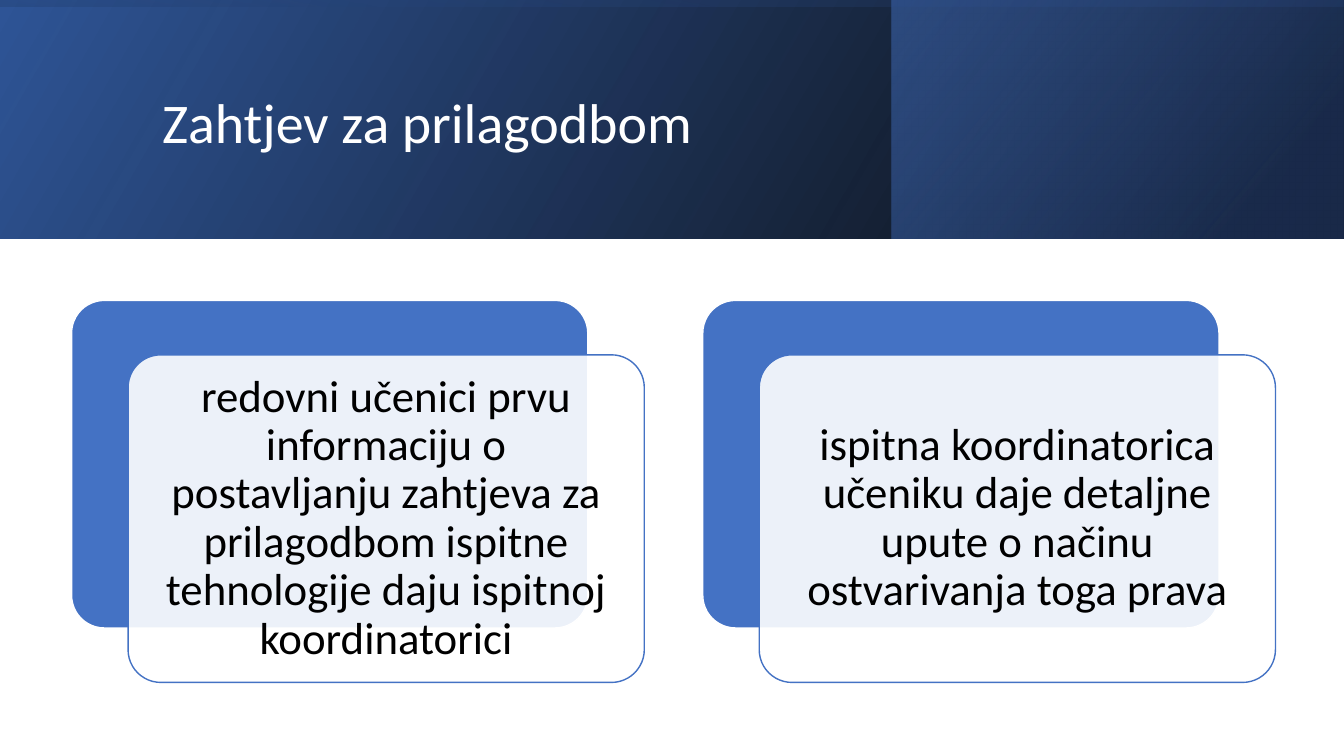
from lxml import etree
from pptx import Presentation
from pptx.dml.color import RGBColor
from pptx.enum.shapes import MSO_SHAPE
from pptx.enum.text import MSO_ANCHOR, PP_ALIGN
from pptx.oxml.ns import qn
from pptx.util import Inches, Pt

RECT = MSO_SHAPE.RECTANGLE
ROUNDED = MSO_SHAPE.ROUNDED_RECTANGLE
MIDDLE = MSO_ANCHOR.MIDDLE
LEFT, CENTER = PP_ALIGN.LEFT, PP_ALIGN.CENTER

BLACK = RGBColor(0x00, 0x00, 0x00)
WHITE = RGBColor(0xFF, 0xFF, 0xFF)
BLUE = RGBColor(0x44, 0x72, 0xC4)
MID_BLUE = RGBColor(0x2F, 0x55, 0x97)
NAVY = RGBColor(0x20, 0x38, 0x64)

SLIDE_WIDTH, SLIDE_HEIGHT, BANNER_HEIGHT = 13.33, 7.5, 2.37

# Banner layers: place, rotation, gradient angle, stops (position, colour, opacity)
BANNER_LAYERS = [
    ((0, 0, SLIDE_WIDTH, BANNER_HEIGHT), 0, 330,
     [(0, BLACK, 96), (100, MID_BLUE, 100)]),
    ((8.84, 0, 4.48, BANNER_HEIGHT), 0, 320,
     [(19, NAVY, 68), (100, BLUE, 48)]),
    ((5.48, -5.48, BANNER_HEIGHT, SLIDE_WIDTH), 270, 350,
     [(23, MID_BLUE, 16), (99, BLACK, 45)]),
]

CARD_TEXTS = [
    "redovni učenici prvu informaciju o postavljanju zahtjeva za "
    "prilagodbom ispitne tehnologije daju ispitnoj koordinatorici",
    "ispitna koordinatorica učeniku daje detaljne upute o načinu "
    "ostvarivanja toga prava",
]
CARD_LEFT, CARD_TOP, CARD_PITCH = 0.71, 2.98, 6.26
CARD_WIDTH, CARD_HEIGHT = 5.12, 3.25
FRONT_SHIFT_X, FRONT_SHIFT_Y = 0.56, 0.54
TEXT_MARGIN = 0.1


class SlideBuilder:
    font_name = "Calibri"
    line_spacing = 0.9

    def __init__(self, deck):
        self.page = deck.slides.add_slide(deck.slide_layouts[6])

    def shape(self, kind, place):
        box = self.page.shapes.add_shape(kind, *map(Inches, place))
        box.shadow.inherit = False
        return box

    def set_opacity(self, color, opacity):
        alpha = etree.SubElement(color, qn("a:alpha"))
        alpha.set("val", str(opacity * 1000))

    def gradient_layer(self, place, rotation, angle, stops):
        box = self.shape(RECT, place)
        box.rotation = rotation
        box.line.fill.background()
        box.fill.gradient()
        properties = box._element.spPr
        properties.find(qn("a:xfrm")).set("flipH", "1")
        gradient = properties.find(qn("a:gradFill"))
        stop_list = gradient.find(qn("a:gsLst"))
        for old_stop in list(stop_list):
            stop_list.remove(old_stop)
        for position, color, opacity in stops:
            stop = etree.SubElement(stop_list, qn("a:gs"))
            stop.set("pos", str(position * 1000))
            node = etree.SubElement(stop, qn("a:srgbClr"))
            node.set("val", str(color))
            self.set_opacity(node, opacity)
        direction = gradient.find(qn("a:lin"))
        direction.set("ang", str(angle * 60000))
        direction.set("scaled", "0")

    def rounded_panel(self, place, fill, line, opacity=100):
        box = self.shape(ROUNDED, place)
        box.adjustments[0] = 0.1
        box.fill.solid()
        box.fill.fore_color.rgb = fill
        box.line.color.rgb = line
        box.line.width = Pt(1)
        if opacity < 100:
            solid = box._element.spPr.find(qn("a:solidFill"))
            self.set_opacity(solid[0], opacity)

    def text(self, place, words, size, color, align=LEFT, inset=(0.1, 0.05)):
        box = self.page.shapes.add_textbox(*map(Inches, place))
        side, edge = map(Inches, inset)
        frame_format = {
            "word_wrap": True, "vertical_anchor": MIDDLE,
            "margin_left": side, "margin_right": side,
            "margin_top": edge, "margin_bottom": edge,
        }
        for name, value in frame_format.items():
            setattr(box.text_frame, name, value)
        para = box.text_frame.paragraphs[0]
        para.alignment = align
        para.line_spacing = self.line_spacing
        span = para.add_run()
        span.text = words
        span.font.color.rgb = color
        for name, value in {"name": self.font_name, "size": Pt(size)}.items():
            setattr(span.font, name, value)

    def card(self, left, top, words):
        self.rounded_panel((left, top, CARD_WIDTH, CARD_HEIGHT), BLUE, WHITE)
        left, top = left + FRONT_SHIFT_X, top + FRONT_SHIFT_Y
        self.rounded_panel((left, top, CARD_WIDTH, CARD_HEIGHT),
                           WHITE, BLUE, opacity=90)
        place = (left + TEXT_MARGIN, top + TEXT_MARGIN,
                 CARD_WIDTH - 2 * TEXT_MARGIN, CARD_HEIGHT - 2 * TEXT_MARGIN)
        self.text(place, words, 32, BLACK, CENTER, inset=(0.13, 0.13))


def main():
    deck = Presentation()
    deck.slide_width = Inches(SLIDE_WIDTH)
    deck.slide_height = Inches(SLIDE_HEIGHT)
    builder = SlideBuilder(deck)

    # Banner and title
    for layer in BANNER_LAYERS:
        builder.gradient_layer(*layer)
    builder.text((1.51, 0.38, 10.63, 1.72), "Zahtjev za prilagodbom", 40, WHITE)

    # Cards
    for index, words in enumerate(CARD_TEXTS):
        builder.card(CARD_LEFT + index * CARD_PITCH, CARD_TOP, words)

    deck.save("out.pptx")


if __name__ == "__main__":
    main()
